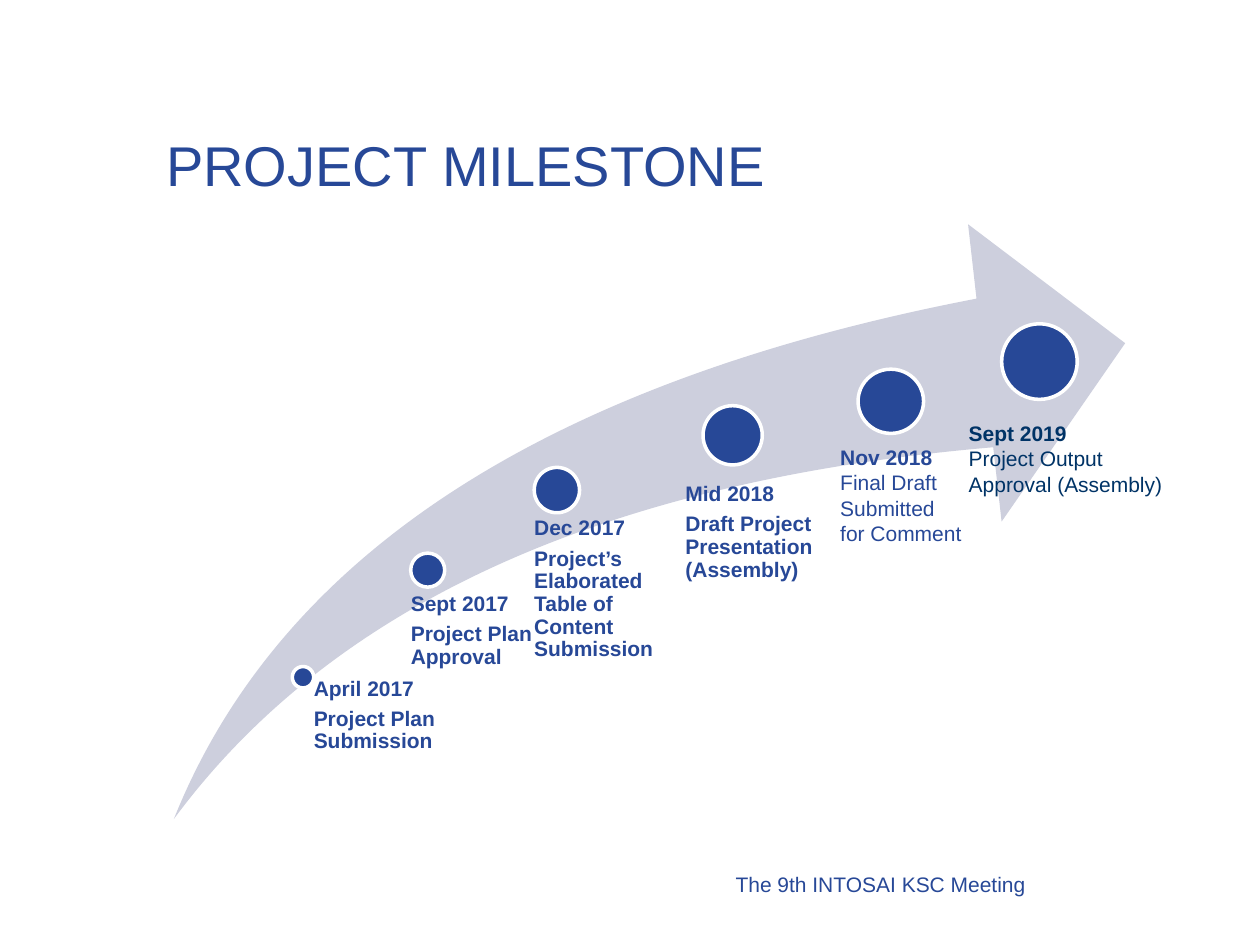
from dataclasses import dataclass

from pptx import Presentation
from pptx.dml.color import RGBColor
from pptx.enum.shapes import MSO_SHAPE
from pptx.enum.text import MSO_ANCHOR, PP_ALIGN
from pptx.util import Inches, Pt

COLORS = {"blue": "274897", "navy": "003366", "arrow": "CDCFDD", "white": "FFFFFF"}
FONT = "Arial"
Box = tuple[float, float, float, float]
DEFAULT_INSETS: Box = (0.1, 0.05, 0.1, 0.05)


@dataclass(frozen=True)
class Milestone:
    date: str
    task: str
    dot: Box
    label: Box
    left_inset: float = 0.1
    bold_task: bool = True
    color: str = "blue"


MILESTONES = [
    Milestone("April 2017", "Project Plan Submission",
              (2.32, 5.29, 0.17, 0.17), (2.4, 5.38, 1.22, 1.12), 0.09),
    Milestone("Sept 2017", "Project Plan Approval",
              (3.26, 4.39, 0.27, 0.27), (3.12, 4.71, 1.11, 1.79), 0.14),
    Milestone("Dec 2017", "Project’s Elaborated Table of Content Submission",
              (4.24, 3.71, 0.36, 0.36), (4.05, 4.11, 1.34, 2.39), 0.19),
    Milestone("Mid 2018", "Draft Project Presentation (Assembly)",
              (5.58, 3.22, 0.47, 0.47), (5.19, 3.84, 1.51, 2.66), 0.25),
    Milestone("Nov 2018", "Final Draft Submitted for Comment",
              (6.81, 2.93, 0.52, 0.51), (6.57, 3.48, 1.18, 0.91), bold_task=False),
    Milestone("Sept 2019", "Project Output Approval (Assembly)",
              (7.95, 2.57, 0.6, 0.6), (7.59, 3.29, 1.74, 0.71),
              bold_task=False, color="navy"),
]


def rgb(name: str) -> RGBColor:
    return RGBColor.from_string(COLORS[name])


def add_filled(slide, kind: MSO_SHAPE, box: Box, color: str):
    sp = slide.shapes.add_shape(kind, *map(Inches, box))
    sp.shadow.inherit = False
    sp.fill.solid()
    sp.fill.fore_color.rgb = rgb(color)
    sp.line.fill.background()
    return sp


def add_text(slide, box: Box, lines: list[tuple[str, bool]], size: float = 12,
             color: str = "blue", insets: Box = DEFAULT_INSETS):
    """Add a wrapped text box with one paragraph per (text, bold) pair."""
    tf = slide.shapes.add_textbox(*map(Inches, box)).text_frame
    tf.word_wrap = True
    tf.margin_left, tf.margin_top, tf.margin_right, tf.margin_bottom = map(Inches, insets)
    for i, (text, bold) in enumerate(lines):
        p = tf.add_paragraph() if i else tf.paragraphs[0]
        p.text = text
        p.font.name = FONT
        p.font.size = Pt(size)
        p.font.bold = bold
        p.font.color.rgb = rgb(color)
    return tf


def add_milestone(slide, m: Milestone) -> None:
    dot = add_filled(slide, MSO_SHAPE.OVAL, m.dot, "blue")
    dot.line.color.rgb = rgb("white")
    dot.line.width = Pt(2)
    insets = (m.left_inset, 0, 0, 0) if m.bold_task else DEFAULT_INSETS
    tf = add_text(slide, m.label, [(m.date, True), (m.task, m.bold_task)],
                  color=m.color, insets=insets)
    if m.bold_task:
        for p in tf.paragraphs:
            p.line_spacing = 0.9
            p.space_after = Pt(4.2)


def main() -> None:
    prs = Presentation()
    prs.slide_width, prs.slide_height = Inches(10), Inches(7.5)
    s = prs.slides.add_slide(prs.slide_layouts[6])

    title = add_text(s, (1.22, 0.84, 8.35, 0.92), [("PROJECT MILESTONE", False)], size=32)
    title.vertical_anchor = MSO_ANCHOR.MIDDLE

    arrow = add_filled(s, MSO_SHAPE.SWOOSH_ARROW, (1.38, 1.78, 7.55, 4.72), "arrow")
    arrow.adjustments[0] = arrow.adjustments[1] = 0.25

    for m in MILESTONES:
        add_milestone(s, m)

    footer = add_text(s, (4.21, 6.82, 4.03, 0.39), [("The 9th INTOSAI KSC Meeting", False)])
    footer.vertical_anchor = MSO_ANCHOR.MIDDLE
    footer.paragraphs[0].alignment = PP_ALIGN.RIGHT

    prs.save("out.pptx")


if __name__ == "__main__":
    main()
